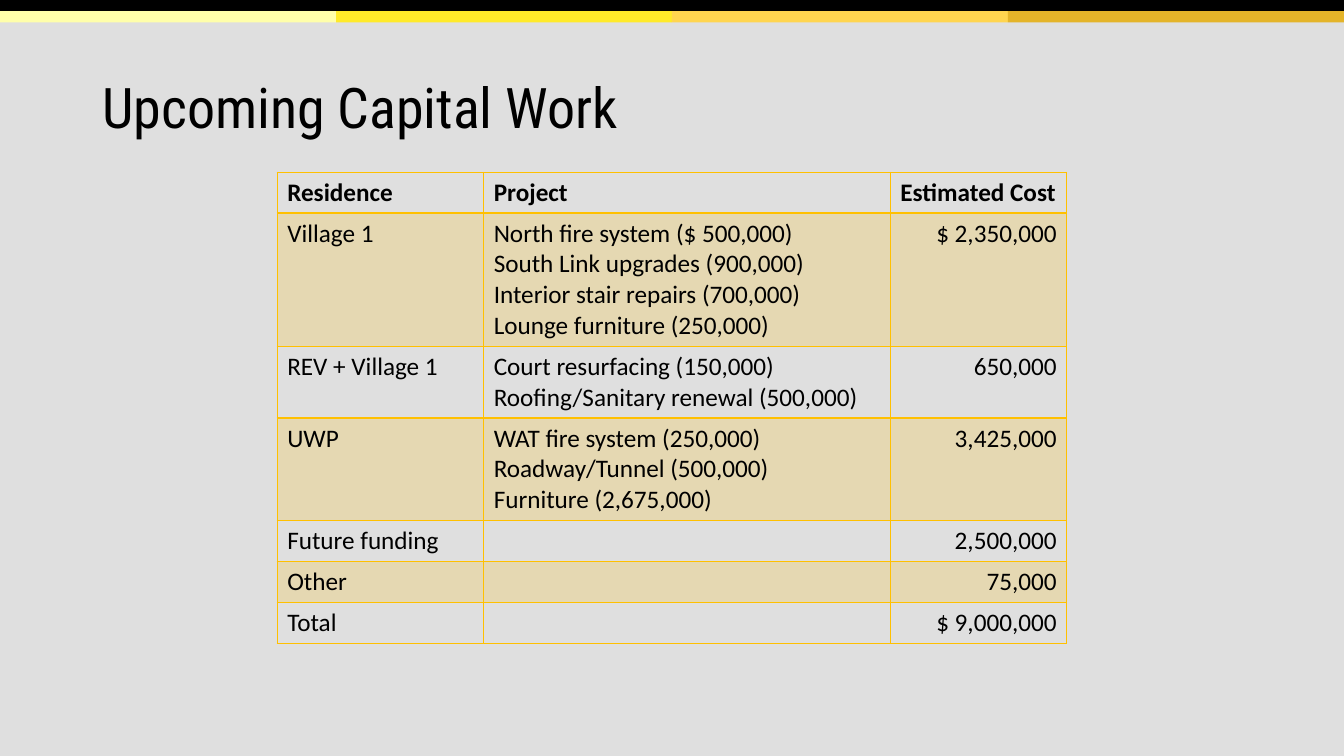
import pptx
import pptx.util
import pptx.dml.color
import pptx.enum.shapes
import pptx.enum.text
import pptx.oxml
import pptx.oxml.ns
from dataclasses import dataclass

Pt = pptx.util.Pt
ALIGN = pptx.enum.text.PP_ALIGN

# Content
TITLE = "Upcoming Capital Work"
HEADER = ("Residence", ["Project"], "Estimated Cost")
WORK = [
    ("Village 1", ["North fire system ($ 500,000)", "South Link upgrades (900,000)",
                   "Interior stair repairs (700,000)", "Lounge furniture (250,000)"],
     "$ 2,350,000"),
    ("REV + Village 1", ["Court resurfacing (150,000)",
                         "Roofing/Sanitary renewal (500,000)"], "650,000"),
    ("UWP", ["WAT fire system (250,000)", "Roadway/Tunnel (500,000)",
             "Furniture (2,675,000)"], "3,425,000"),
    ("Future funding", [], "2,500,000"),
    ("Other", [], "75,000"),
    ("Total", [], "$ 9,000,000"),
]


@dataclass(frozen=True)
class Theme:
    page: str = "DFDFDF"
    ink: str = "000000"
    stripes: tuple = ("FFFFAA", "FFEA29", "FFD54F", "E4B429")
    gold: str = "FFC000"
    band_opacity: int = 20
    title_font: str = "Roboto Condensed"
    title_size: int = 40
    table_font: str = "Calibri"
    table_size: int = 18


THEME = Theme()
PAGE_WIDTH, PAGE_HEIGHT = 960, 540
BAR_HEIGHT = 8
TABLE_LEFT, TABLE_TOP = 198, 123
COLUMN_WIDTHS = (147.5, 290.5, 126)
ROW_HEIGHT, LINE_HEIGHT = 29.2, 22


def color(value):
    return pptx.dml.color.RGBColor.from_string(value)


def set_attributes(target, values):
    for name, value in values.items():
        setattr(target, name, value)


def write(para, text, font, size, bold=False):
    span = para.add_run()
    span.text = text
    set_attributes(span.font, {"name": font, "size": Pt(size), "bold": bold})
    span.font.color.rgb = color(THEME.ink)


def add_bar(page, left, top, width, fill):
    bar = page.shapes.add_shape(pptx.enum.shapes.MSO_SHAPE.RECTANGLE,
                                Pt(left), Pt(top), Pt(width), Pt(BAR_HEIGHT))
    bar.shadow.inherit = False
    bar.fill.solid()
    bar.fill.fore_color.rgb = color(fill)
    bar.line.fill.background()


def add_borders(cell, bottom_width):
    properties = cell._tc.get_or_add_tcPr()
    for side, width in (("L", 1), ("R", 1), ("T", 1), ("B", bottom_width)):
        properties.append(pptx.oxml.parse_xml(
            f'<a:ln{side} {pptx.oxml.ns.nsdecls("a")} w="{Pt(width)}">'
            f'<a:solidFill><a:srgbClr val="{THEME.gold}"/></a:solidFill></a:ln{side}>'))


def fill_cell(cell, banded):
    if not banded:
        cell.fill.background()
        return
    cell.fill.solid()
    cell.fill.fore_color.rgb = color(THEME.gold)
    shade = cell._tc.tcPr.find(".//" + pptx.oxml.ns.qn("a:solidFill") + "[last()]")
    shade = cell._tc.tcPr.findall(pptx.oxml.ns.qn("a:solidFill"))[-1][0]
    shade.append(pptx.oxml.parse_xml(
        f'<a:alpha {pptx.oxml.ns.nsdecls("a")} val="{THEME.band_opacity * 1000}"/>'))


def add_title(page):
    box = page.shapes.add_textbox(Pt(66), Pt(57), Pt(828), Pt(43))
    set_attributes(box.text_frame, {
        "word_wrap": True, "vertical_anchor": pptx.enum.text.MSO_ANCHOR.MIDDLE})
    para = box.text_frame.paragraphs[0]
    para.line_spacing = 0.9
    write(para, TITLE, THEME.title_font, THEME.title_size)


def add_work_table(page):
    rows = [HEADER] + WORK
    heights = [ROW_HEIGHT + LINE_HEIGHT * max(len(projects) - 1, 0)
               for _, projects, _ in rows]
    table = page.shapes.add_table(
        len(rows), len(COLUMN_WIDTHS), Pt(TABLE_LEFT), Pt(TABLE_TOP),
        Pt(sum(COLUMN_WIDTHS)), Pt(sum(heights))).table
    set_attributes(table, {"first_row": False, "horz_banding": False})
    for column, width in zip(table.columns, COLUMN_WIDTHS):
        column.width = Pt(width)

    for row_index, (residence, projects, cost) in enumerate(rows):
        table.rows[row_index].height = Pt(heights[row_index])
        is_header = row_index == 0
        for column_index, lines in enumerate(([residence], projects, [cost])):
            cell = table.cell(row_index, column_index)
            add_borders(cell, 2 if is_header else 1)
            fill_cell(cell, banded=row_index % 2 == 1)
            for line_index, line in enumerate(lines):
                frame = cell.text_frame
                para = frame.add_paragraph() if line_index else frame.paragraphs[0]
                if column_index == 2 and not is_header:
                    para.alignment = ALIGN.RIGHT
                write(para, line, THEME.table_font, THEME.table_size, is_header)


def main():
    deck = pptx.Presentation()
    set_attributes(deck, {"slide_width": Pt(PAGE_WIDTH), "slide_height": Pt(PAGE_HEIGHT)})
    page = deck.slides.add_slide(deck.slide_layouts[6])
    page.background.fill.solid()
    page.background.fill.fore_color.rgb = color(THEME.page)

    # Black bar with four coloured stripes below it
    add_bar(page, 0, 0, PAGE_WIDTH, THEME.ink)
    stripe_width = PAGE_WIDTH / len(THEME.stripes)
    for index, stripe in enumerate(THEME.stripes):
        add_bar(page, index * stripe_width, BAR_HEIGHT, stripe_width, stripe)

    add_title(page)
    add_work_table(page)
    deck.save("out.pptx")


if __name__ == "__main__":
    main()
